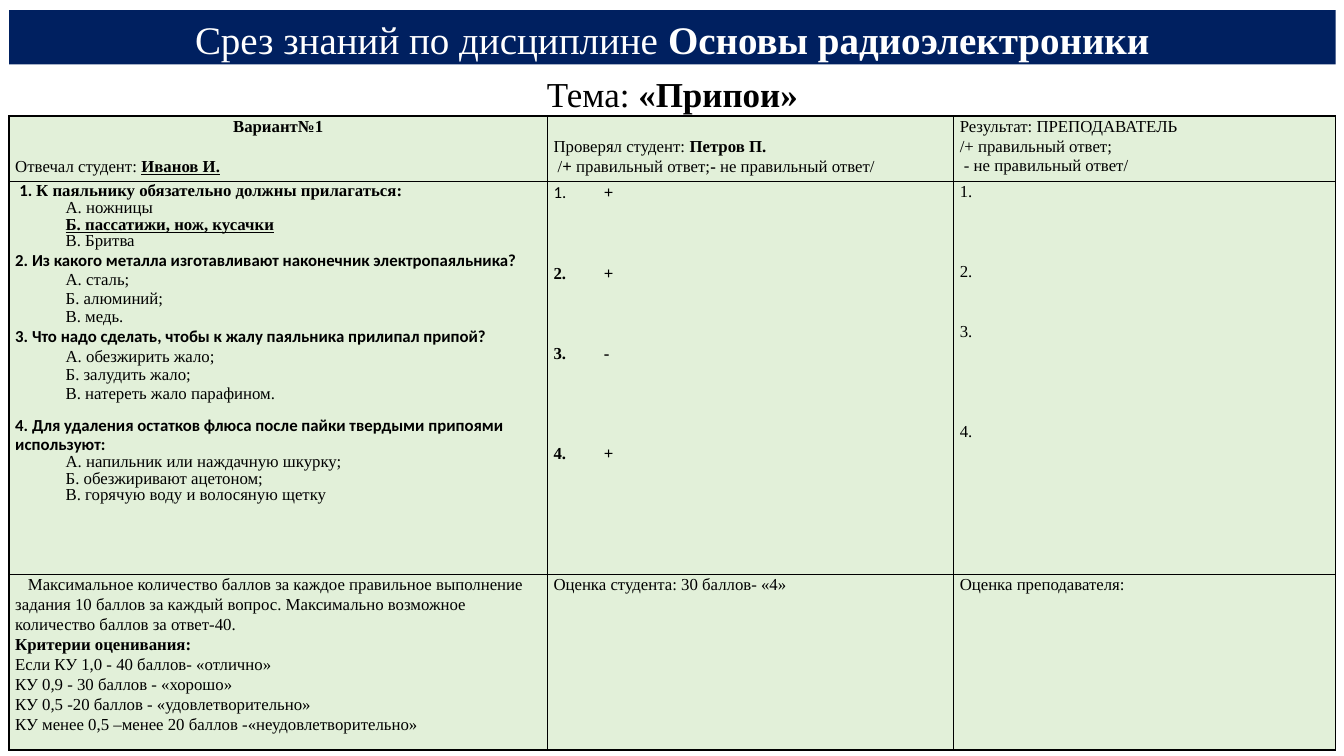
from lxml import etree
from pptx import Presentation
from pptx.dml.color import RGBColor
from pptx.enum.text import MSO_ANCHOR, MSO_AUTO_SIZE, PP_ALIGN
from pptx.oxml.ns import qn
from pptx.util import Pt

CENTER, LEFT = PP_ALIGN.CENTER, PP_ALIGN.LEFT
TOP, MIDDLE = MSO_ANCHOR.TOP, MSO_ANCHOR.MIDDLE
NO_FIT = MSO_AUTO_SIZE.NONE
SERIF, SANS = "Times New Roman", "Calibri"
BLACK, WHITE, NAVY, GREEN = "000000", "FFFFFF", "002060", "E2F0D9"
LINE = 14.3
ANSWER_INDENT = 36

COLUMNS = [384.5, 290.2, 272.8]
ROWS = [46.8, 280.8, 125.3]

QUESTIONS = [
    ([("1. ", "bc"), ("К паяльнику обязательно должны прилагаться:", "b")],
     [("А. ножницы", ""), ("Б. пассатижи, нож, кусачки", "bu"), ("В. Бритва", "")],
     dict(indent=3, spacing=0.9), 0.9),
    ([("2. Из какого металла изготавливают наконечник электропаяльника?", "bc")],
     [("А. сталь;", ""), ("Б. алюминий;", ""), ("В. медь.", "")],
     dict(left=18, indent=-18, spacing=1), 1),
    ([("3. Что надо сделать, чтобы к жалу паяльника прилипал припой?", "bc")],
     [("А. обезжирить жало;", ""), ("Б. залудить жало;", ""),
      ("В. натереть жало парафином.", "")],
     dict(left=18, indent=-18, spacing=1), 1),
    ([("4. Для удаления остатков флюса после пайки твердыми припоями используют:", "bc")],
     [("А. напильник или наждачную шкурку;", ""), ("Б. обезжиривают ацетоном;", ""),
      ("В. горячую воду и волосяную щетку", "")],
     dict(before=10, spacing=0.9), 0.9),
]
STUDENT_MARKS = [("1.", "c", "+", 35.7, 0), ("2.", "b", "+", 39.2, 3),
                 ("3.", "b", "-", 39.2, 3), ("4.", "b", "+", 45, 4)]
TEACHER_MARKS = [("1.", 0), ("2.", 3), ("3.", 2), ("4.", 4)]
CRITERIA = ["Если КУ 1,0 - 40 баллов- «отлично»", "КУ 0,9 - 30 баллов - «хорошо»",
            "КУ 0,5 -20 баллов - «удовлетворительно»",
            "КУ менее 0,5 –менее 20 баллов -«неудовлетворительно»"]


def rgb(value):
    return RGBColor.from_string(value)


def para(runs, **layout):
    return runs, layout


def plain(text, **layout):
    return para([(text, "")], **layout)


def write_paragraph(p, runs, size=12, color=BLACK, align=LEFT, spacing=1.07,
                    before=0, after=0, left=0, indent=0, tab=None):
    pPr = p._p.get_or_add_pPr()
    pPr.set("marL", str(Pt(left)))
    pPr.set("indent", str(Pt(indent)))
    if tab:
        tabs = etree.SubElement(pPr, qn("a:tabLst"))
        etree.SubElement(tabs, qn("a:tab"), pos=str(Pt(tab)), algn="l")
    p.alignment, p.line_spacing = align, spacing
    p.space_before, p.space_after = Pt(before), Pt(after)
    for text, style in runs:
        r = p.add_run()
        r.text = text
        r.font.name = SANS if "c" in style else SERIF
        r.font.size = Pt(size)
        r.font.bold = "b" in style
        r.font.underline = "u" in style
        r.font.color.rgb = rgb(color)


def write_frame(tf, paragraphs):
    for i, (runs, layout) in enumerate(paragraphs):
        p = tf.add_paragraph() if i else tf.paragraphs[0]
        write_paragraph(p, runs, **layout)


def heading(sp, box, anchor, runs, **layout):
    sp.left, sp.top, sp.width, sp.height = map(Pt, box)
    tf = sp.text_frame
    tf.word_wrap, tf.auto_size, tf.vertical_anchor = True, NO_FIT, anchor
    write_frame(tf, [para(runs, align=CENTER, **layout)])


def style_cell(cell, margin_top=0):
    cell.margin_left = cell.margin_right = Pt(4.4)
    cell.margin_top, cell.margin_bottom = Pt(margin_top), 0
    cell.vertical_anchor = TOP
    tcPr = cell._tc.get_or_add_tcPr()
    for side in ("lnL", "lnR", "lnT", "lnB"):
        ln = etree.SubElement(tcPr, qn(f"a:{side}"), w=str(Pt(1)))
        fill = etree.SubElement(ln, qn("a:solidFill"))
        etree.SubElement(fill, qn("a:srgbClr"), val=BLACK)
    cell.fill.solid()
    cell.fill.fore_color.rgb = rgb(GREEN)


def header_cells():
    return [
        [para([("Вариант№1", "b")], align=CENTER),
         para([("Отвечал студент: ", ""), ("Иванов И.", "bu")], before=LINE)],
        [para([("Проверял студент: ", ""), ("Петров П.", "b")]),
         para([("/", ""), ("+", "b"), (" правильный ответ;", ""), ("-", "b"),
               (" не правильный ответ/", "")], indent=3)],
        [plain("Результат: ПРЕПОДАВАТЕЛЬ"), plain("/+ правильный ответ;"),
         plain("- не правильный ответ/", indent=3)],
    ]


def question_cells():
    questions = []
    for runs, answers, layout, spacing in QUESTIONS:
        questions.append(para(runs, **layout))
        questions += [para([answer], left=ANSWER_INDENT, spacing=spacing)
                      for answer in answers]
    student = [para([(number, style), ("\t" + mark, "b")], tab=tab, before=gap * LINE)
               for number, style, mark, tab, gap in STUDENT_MARKS]
    teacher = [plain(number, before=gap * LINE) for number, gap in TEACHER_MARKS]
    return [questions, student, teacher]


def grade_cells():
    rules = [plain("Максимальное количество баллов за каждое правильное выполнение "
                   "задания 10 баллов за каждый вопрос. Максимально возможное "
                   "количество баллов за ответ-40.", indent=9),
             para([("Критерии оценивания:", "b")])]
    rules += [plain(text) for text in CRITERIA]
    return [rules, [plain("Оценка студента: 30 баллов- «4»")],
            [plain("Оценка преподавателя:")]]


def survey_table(s, left, top):
    table = s.shapes.add_table(len(ROWS), len(COLUMNS), Pt(left), Pt(top),
                               Pt(sum(COLUMNS)), Pt(sum(ROWS))).table
    table.first_row = table.horz_banding = False
    for column, width in zip(table.columns, COLUMNS):
        column.width = Pt(width)
    for row, height in zip(table.rows, ROWS):
        row.height = Pt(height)
    for i, contents in enumerate([header_cells(), question_cells(), grade_cells()]):
        for j, paragraphs in enumerate(contents):
            cell = table.cell(i, j)
            style_cell(cell, LINE if (i, j) == (0, 1) else 0)
            write_frame(cell.text_frame, paragraphs)


def main():
    prs = Presentation()
    prs.slide_width, prs.slide_height = Pt(960), Pt(540)
    s = prs.slides.add_slide(prs.slide_layouts[0])
    title, subtitle = s.placeholders
    title.fill.solid()
    title.fill.fore_color.rgb = rgb(NAVY)
    heading(title, (6.5, 7.2, 947.5, 38.9), MIDDLE,
            [("Срез знаний по дисциплине ", ""), ("Основы радиоэлектроники", "b")],
            size=27.9, color=WHITE)
    heading(subtitle, (6.5, 51.8, 947.5, 480.2), TOP,
            [("Тема: ", ""), ("«Припои»", "b")], size=25, spacing=0.9)
    survey_table(s, 6.5, 82.8)
    prs.save("out.pptx")


if __name__ == "__main__":
    main()
